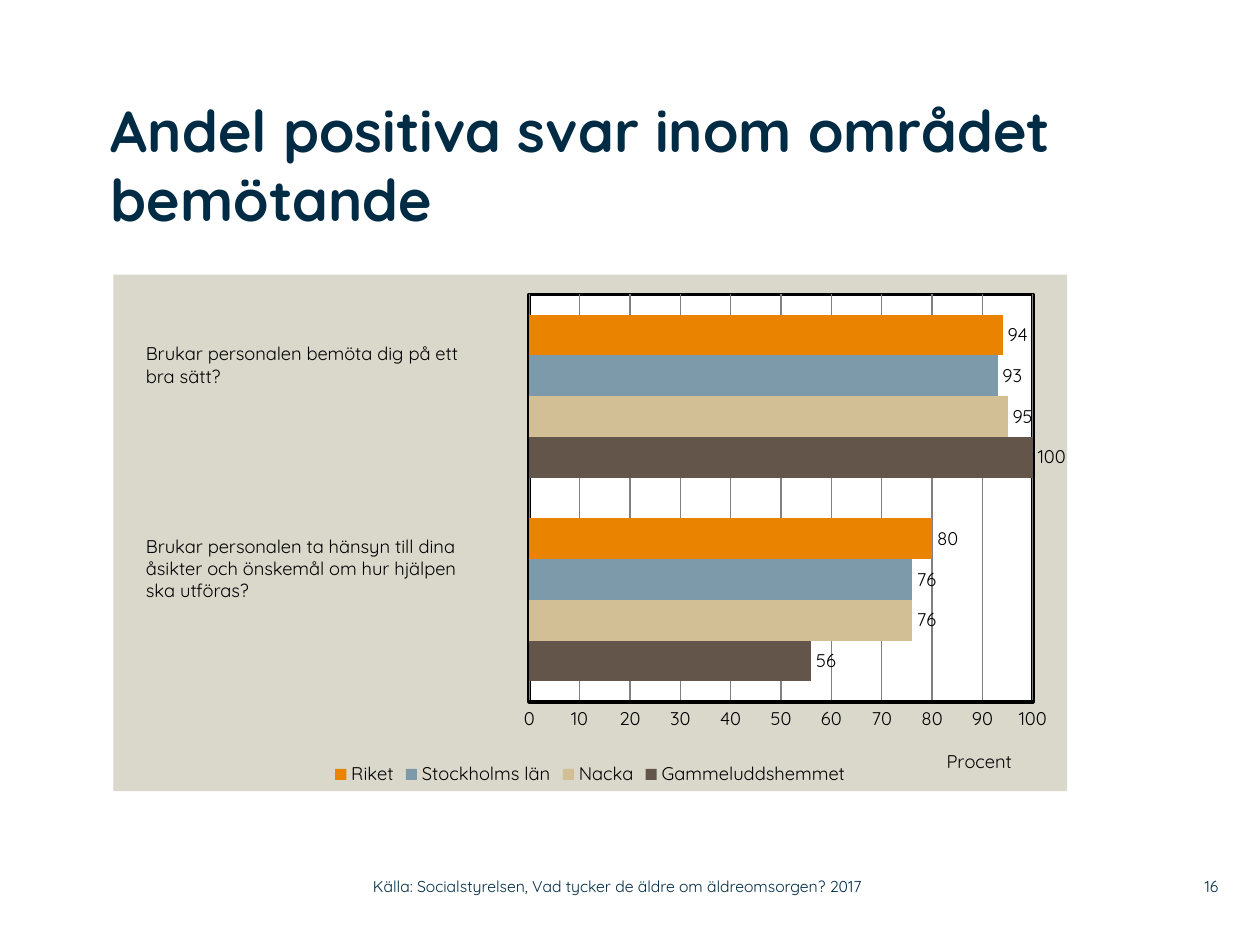
from lxml.etree import fromstring
from pptx import Presentation
from pptx.chart.data import CategoryChartData
from pptx.dml.color import RGBColor
from pptx.enum.chart import XL_CHART_TYPE, XL_LABEL_POSITION, XL_LEGEND_POSITION, XL_TICK_MARK
from pptx.enum.text import MSO_ANCHOR, MSO_AUTO_SIZE, PP_ALIGN
from pptx.util import Inches, Pt

FONT = "Quicksand"
NAVY, BLACK, GREY = "002B45", "000000", "808080"
PANEL, WHITE = "DAD7CB", "FFFFFF"

TITLE = "Andel positiva svar inom området bemötande"
CATEGORIES = ["1", "2"]
SERIES = [
    ("Gammeluddshemmet", (56, 100), "635549"),
    ("Nacka", (76, 95), "D3BF96"),
    ("Stockholms län", (76, 93), "7D9AAA"),
    ("Riket", (80, 94), "E98300"),
]
QUESTIONS = [
    ((1.06, 2.67, 2.97, 0.45), ["Brukar personalen bemöta dig på ett", "bra sätt?"]),
    ((1.06, 4.2, 2.99, 0.63), ["Brukar personalen ta hänsyn till dina",
                               "åsikter och önskemål om hur hjälpen", "ska utföras?"]),
]
FOOTERS = [
    ((9.2, 6.89, 0.47, 0.29), "16", PP_ALIGN.RIGHT),
    ((2.96, 6.89, 4.43, 0.29),
     "Källa: Socialstyrelsen, Vad tycker de äldre om äldreomsorgen? 2017", PP_ALIGN.LEFT),
]
CHART_NS = "http://schemas.openxmlformats.org/drawingml/2006/chart"
DRAWING_NS = "http://schemas.openxmlformats.org/drawingml/2006/main"


def color(value):
    return RGBColor.from_string(value)


def style_font(font, size, value=BLACK, bold=False):
    font.name, font.size, font.bold = FONT, Pt(size), bold
    font.color.rgb = color(value)


def fill_text(frame, lines, size, value, align=PP_ALIGN.LEFT, bold=False):
    for index, line in enumerate(lines):
        paragraph = frame.add_paragraph() if index else frame.paragraphs[0]
        paragraph.alignment = align
        run = paragraph.add_run()
        run.text = line
        style_font(run.font, size, value, bold)


def clear_insets(frame):
    frame.margin_left = frame.margin_right = frame.margin_top = frame.margin_bottom = 0


def add_text(slide, box, lines, size, value, align=PP_ALIGN.LEFT):
    frame = slide.shapes.add_textbox(*map(Inches, box)).text_frame
    frame.word_wrap = True
    fill_text(frame, lines, size, value, align)
    return frame


def chart_fill(fill, line=""):
    """Shape properties for a chart part, with an optional outline."""
    outline = (f'<a:ln w="{Pt(2)}"><a:solidFill><a:srgbClr val="{line}"/></a:solidFill></a:ln>'
               if line else "<a:ln><a:noFill/></a:ln>")
    return fromstring(
        f'<c:spPr xmlns:c="{CHART_NS}" xmlns:a="{DRAWING_NS}">'
        f'<a:solidFill><a:srgbClr val="{fill}"/></a:solidFill>{outline}</c:spPr>')


def manual_layout(inner=False, **position):
    """Layout in fractions of the chart area."""
    target = '<c:layoutTarget val="inner"/>' if inner else ""
    modes = "".join(f'<c:{key}Mode val="edge"/>' for key in "xy")
    values = "".join(f'<c:{key} val="{value}"/>' for key, value in position.items())
    return fromstring(f'<c:layout xmlns:c="{CHART_NS}"><c:manualLayout>'
                      f"{target}{modes}{values}</c:manualLayout></c:layout>")


def replace_layout(parent, layout, index):
    for old in parent.findall(f"{{{CHART_NS}}}layout"):
        parent.remove(old)
    parent.insert(index, layout)


def add_bar_chart(slide):
    data = CategoryChartData()
    data.categories = CATEGORIES
    for name, values, _ in SERIES:
        data.add_series(name, values)
    box = map(Inches, (0.9, 2.18, 7.57, 4.1))
    chart = slide.shapes.add_chart(XL_CHART_TYPE.BAR_CLUSTERED, *box, data).chart
    style_font(chart.font, 10.5)
    chart.has_title = False
    chart.has_legend = True
    chart.legend.position = XL_LEGEND_POSITION.BOTTOM
    chart.legend.include_in_layout = False
    style_font(chart.legend.font, 10.5)

    plot = chart.plots[0]
    plot.gap_width, plot.overlap, plot.vary_by_categories = 100, 0, False
    for series, (_, _, value) in zip(plot.series, SERIES):
        series.format.fill.solid()
        series.format.fill.fore_color.rgb = color(value)
        labels = series.data_labels
        labels.show_value = True
        labels.position = XL_LABEL_POSITION.OUTSIDE_END
        style_font(labels.font, 10.5)

    chart.category_axis.visible = False
    axis = chart.value_axis
    axis.minimum_scale, axis.maximum_scale, axis.major_unit = 0, 100, 10
    axis.major_tick_mark = axis.minor_tick_mark = XL_TICK_MARK.NONE
    style_font(axis.tick_labels.font, 10.5)
    axis.has_major_gridlines = True
    for line, value, width in ((axis.format.line, BLACK, 2),
                               (axis.major_gridlines.format.line, GREY, 0.75)):
        line.color.rgb, line.width = color(value), Pt(width)
    axis.has_title = True
    fill_text(axis.axis_title.text_frame, ["Procent"], 10.5, BLACK)
    replace_layout(axis.axis_title._element, manual_layout(x=0.87, y=0.91), 1)

    chart_element = chart._chartSpace.chart
    plot_area = chart_element.plotArea
    replace_layout(plot_area, manual_layout(True, x=0.436, y=0.038, w=0.528, h=0.789), 0)
    plot_area.append(chart_fill(WHITE, BLACK))
    chart_element.addnext(chart_fill(PANEL))


def main():
    presentation = Presentation()
    presentation.slide_width, presentation.slide_height = Inches(10), Inches(7.5)
    slide = presentation.slides.add_slide(presentation.slide_layouts[5])

    title = slide.shapes.title
    title.left, title.top, title.width, title.height = map(Inches, (0.88, 0.75, 7.6, 1.42))
    frame = title.text_frame
    frame.auto_size, frame.word_wrap = MSO_AUTO_SIZE.NONE, True
    frame.vertical_anchor = MSO_ANCHOR.TOP
    clear_insets(frame)
    fill_text(frame, [TITLE], 33, NAVY, bold=True)

    add_bar_chart(slide)
    for box, lines in QUESTIONS:
        frame = add_text(slide, box, lines, 10.5, BLACK)
        frame.auto_size = MSO_AUTO_SIZE.SHAPE_TO_FIT_TEXT
    for box, text, align in FOOTERS:
        frame = add_text(slide, box, [text], 9, NAVY, align)
        frame.vertical_anchor = MSO_ANCHOR.MIDDLE
        clear_insets(frame)
    presentation.save("out.pptx")


if __name__ == "__main__":
    main()
